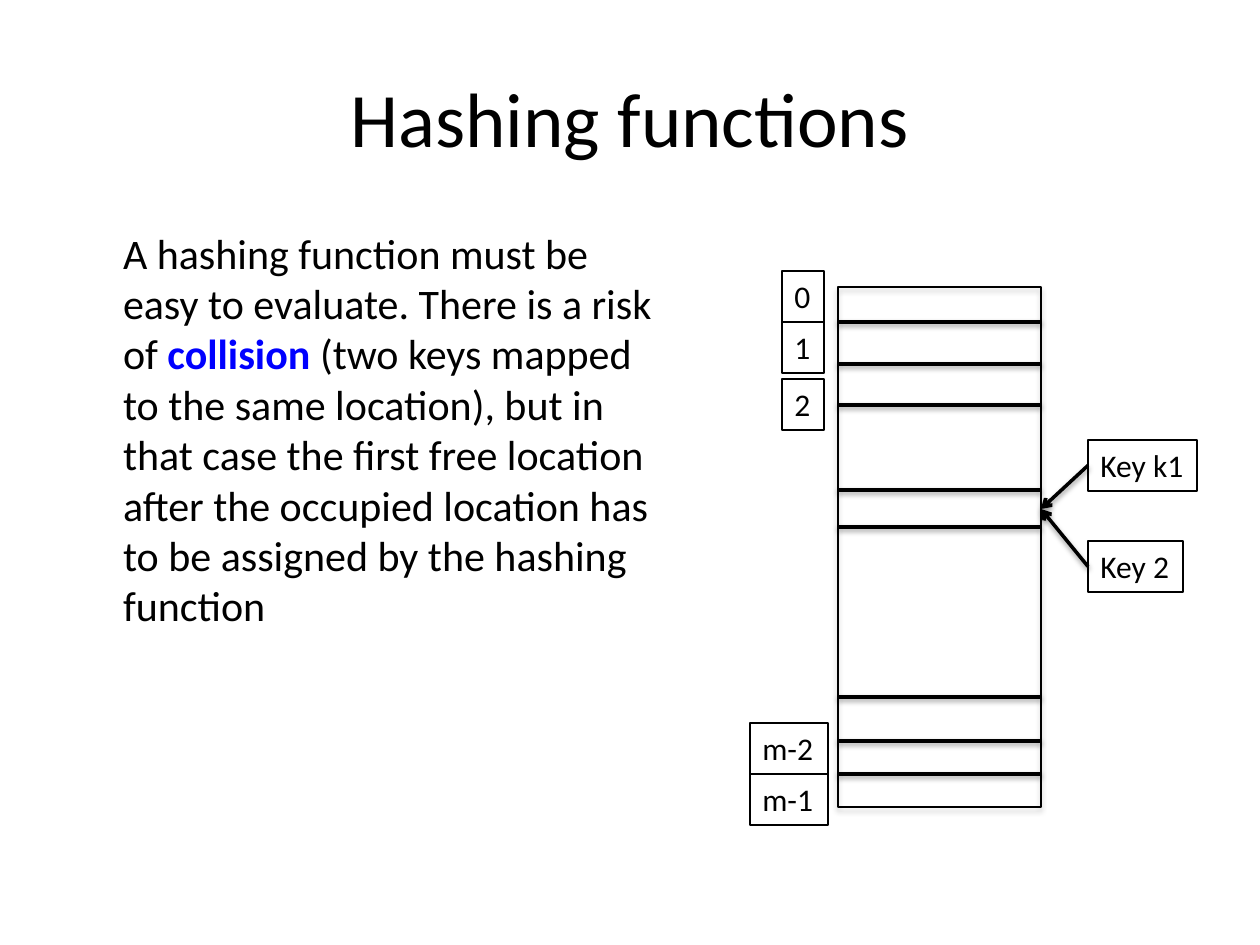
from lxml import etree
from pptx import Presentation
from pptx.dml.color import RGBColor
from pptx.enum.shapes import MSO_CONNECTOR, MSO_SHAPE
from pptx.enum.text import MSO_ANCHOR, MSO_AUTO_SIZE, PP_ALIGN
from pptx.oxml import parse_xml
from pptx.oxml.ns import nsdecls, qn
from pptx.util import Emu, Pt

PX_PER_INCH = 126
BLACK = RGBColor(0x00, 0x00, 0x00)
BLUE = RGBColor(0x00, 0x00, 0xFF)
FONT = "Calibri"

TABLE_LEFT, TABLE_TOP, TABLE_WIDTH, TABLE_HEIGHT = 838, 287, 203, 520
TABLE_RIGHT = TABLE_LEFT + TABLE_WIDTH
SLOT_LINES = [322, 364, 405, 490, 527, 697, 741, 774]
LABEL_HEIGHT = 51
INDEX_LABELS = [
    ("0", 782, 271, 42),
    ("1", 782, 322, 42),
    ("2", 782, 379, 42),
    ("m-2", 750, 723, 78),
    ("m-1", 750, 774, 78),
]
KEY_LABELS = [("Key k1", 1088, 440, 109), ("Key 2", 1088, 541, 95)]
COLLISION_Y = 509


def px(length):
    return Emu(round(length * 914400 / PX_PER_INCH))


def write(paragraph, text, size, **formats):
    run = paragraph.add_run()
    run.text = text
    run.font.color.rgb = formats.pop("color", BLACK)
    settings = {"name": FONT, "size": Pt(size), **formats}
    for name, value in settings.items():
        setattr(run.font, name, value)


def add_shadow(shape, opacity, distance):
    """Give the shape a soft shadow straight below it."""
    shape._element.spPr.append(parse_xml(
        f'<a:effectLst {nsdecls("a")}>'
        f'<a:outerShdw blurRad="{Pt(3.1)}" dist="{Pt(distance)}" dir="5400000" rotWithShape="0">'
        f'<a:srgbClr val="{BLACK}"><a:alpha val="{opacity * 1000}"/></a:srgbClr>'
        '</a:outerShdw></a:effectLst>'))


def add_text_area(slide, left, top, width, height, **formats):
    frame = slide.shapes.add_textbox(*map(px, (left, top, width, height))).text_frame
    frame.word_wrap = True
    for name, value in formats.items():
        setattr(frame, name, value)
    return frame.paragraphs[0]


def add_box(slide, left, top, width, height):
    box = slide.shapes.add_shape(MSO_SHAPE.RECTANGLE, *map(px, (left, top, width, height)))
    box.fill.background()
    box.line.color.rgb = BLACK
    box.line.width = Pt(0.75)
    return box


def add_label(slide, text, left, top, width):
    label = add_box(slide, left, top, width, LABEL_HEIGHT)
    label.shadow.inherit = False
    frame = label.text_frame
    frame.word_wrap = False
    frame.auto_size = MSO_AUTO_SIZE.SHAPE_TO_FIT_TEXT
    frame.vertical_anchor = MSO_ANCHOR.TOP
    frame.paragraphs[0].alignment = PP_ALIGN.LEFT
    write(frame.paragraphs[0], text, 18)
    return label


def add_line(slide, start, end, arrow=False):
    line = slide.shapes.add_connector(MSO_CONNECTOR.STRAIGHT, *map(px, start + end))
    line.line.color.rgb = BLACK
    line.line.width = Pt(2)
    if arrow:
        etree.SubElement(line.line._get_or_add_ln(), qn("a:tailEnd"), type="arrow")
    add_shadow(line, opacity=38, distance=1.6)
    return line


def add_hash_table(slide):
    table = add_box(slide, TABLE_LEFT, TABLE_TOP, TABLE_WIDTH, TABLE_HEIGHT)
    add_shadow(table, opacity=35, distance=1.8)
    for y in SLOT_LINES:
        add_line(slide, (TABLE_LEFT, y), (TABLE_RIGHT, y))
    for index_label in INDEX_LABELS:
        add_label(slide, *index_label)


def add_key(slide, text, left, top, width):
    """Add a key with an arrow to the slot where the keys collide."""
    key = add_label(slide, text, left, top, width)
    arrow = add_line(slide, (left, top + LABEL_HEIGHT // 2), (TABLE_RIGHT, COLLISION_Y), arrow=True)
    arrow.begin_connect(key, 1)


def main():
    presentation = Presentation()
    presentation.slide_width, presentation.slide_height = px(1260), px(945)
    slide = presentation.slides.add_slide(presentation.slide_layouts[6])

    title = add_text_area(slide, 63, 38, 1134, 157, vertical_anchor=MSO_ANCHOR.MIDDLE)
    title.alignment = PP_ALIGN.CENTER
    write(title, "Hashing functions", 44)

    body = add_text_area(slide, 63, 221, 622, 605, margin_left=px(60))
    write(body, "A hashing function must be easy to evaluate. There is a risk of ", 24)
    write(body, "collision", 24, color=BLUE, bold=True)
    write(body, " (two keys mapped to the same location), but in that case the first free "
                "location after the occupied location has to be assigned by the hashing "
                "function", 24)

    add_hash_table(slide)
    for key_label in KEY_LABELS:
        add_key(slide, *key_label)

    presentation.save("out.pptx")


if __name__ == "__main__":
    main()
